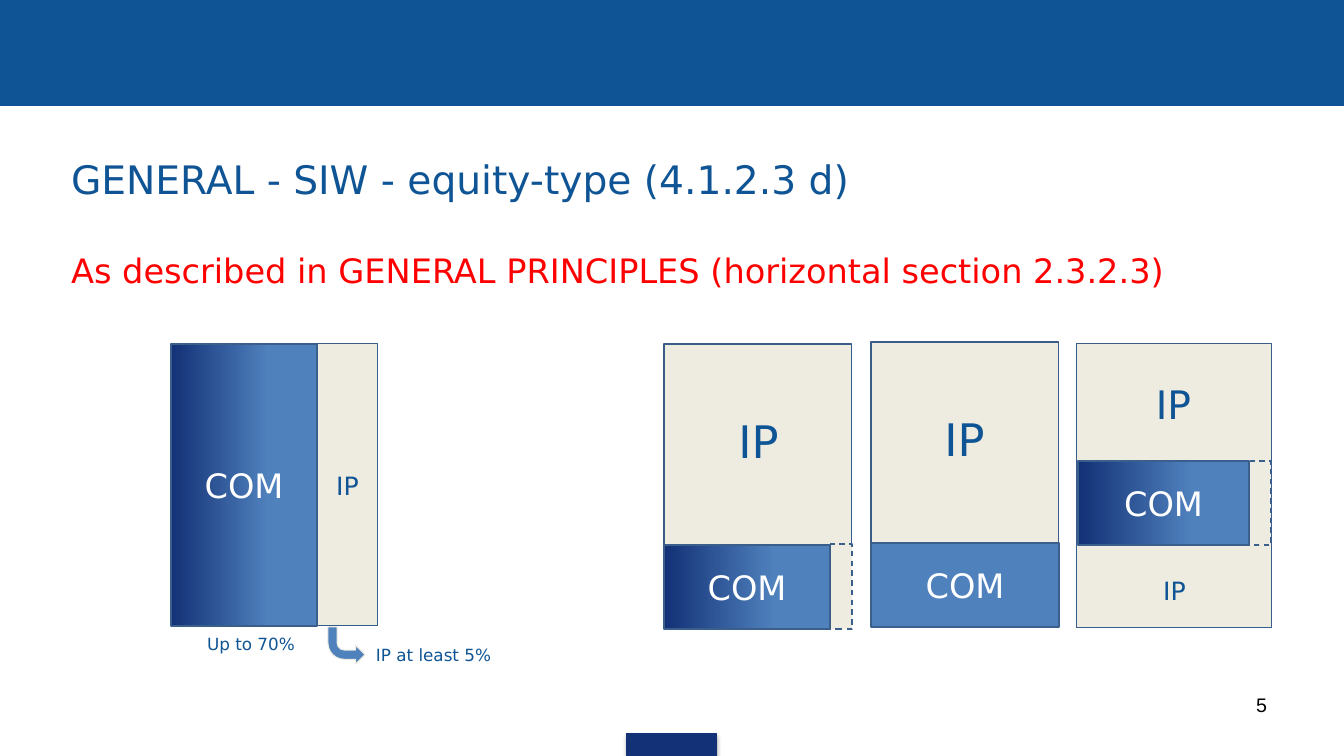
"""Build the slide on equity-type SIW shares between COM and IP."""
from lxml import etree
from pptx import Presentation
from pptx.dml.color import RGBColor
from pptx.enum.dml import MSO_LINE
from pptx.enum.shapes import MSO_SHAPE
from pptx.enum.text import MSO_ANCHOR, MSO_AUTO_SIZE, PP_ALIGN
from pptx.oxml.ns import qn
from pptx.util import Emu, Pt

RECTANGLE, BENT_ARROW = MSO_SHAPE.RECTANGLE, MSO_SHAPE.BENT_ARROW
LEFT, CENTER, RIGHT = PP_ALIGN.LEFT, PP_ALIGN.CENTER, PP_ALIGN.RIGHT
TOP, MIDDLE = MSO_ANCHOR.TOP, MSO_ANCHOR.MIDDLE
DASH, NO_AUTOFIT = MSO_LINE.DASH, MSO_AUTO_SIZE.NONE

WIDTH, HEIGHT = 1344, 756
EMU_PER_PX = 12192000 / WIDTH
COLORS = {
    "header": "0F5494", "navy": "133176", "red": "FF0000", "blue": "4F81BD",
    "cream": "EEECE1", "edge": "385D8A", "com_edge": "3A5F8C",
    "white": "FFFFFF", "black": "000000",
}

TITLE = "GENERAL - SIW - equity-type (4.1.2.3 d)"
SUBTITLE = "As described in GENERAL PRINCIPLES (horizontal section 2.3.2.3)"
TITLE_BOX = (61, 150, 1254, 60)
SUBTITLE_BOX = (61, 245, 1254, 55)

IP_BLOCKS = [(317, 344, 61, 282), (664, 344, 188, 201),
             (871, 342, 188, 201), (1077, 344, 195, 284)]
DASHED_BLOCKS = [(829, 544, 23, 85), (1248, 461, 23, 84)]
COM_BLOCKS = [
    ((171, 344, 146, 282), True),
    ((664, 545, 166, 84), True),
    ((871, 543, 188, 84), False),
    ((1078, 461, 171, 84), True),
]
LABELS = [
    ("IP at least 5%", (366, 640, 198, 30), {"size": 12}),
    ("Up to 70%", (188, 629, 126, 30), {"size": 12, "align": CENTER}),
    ("IP", (317, 465, 61, 40), {"size": 18, "align": CENTER}),
    ("IP", (702, 409, 113, 68), {"size": 32, "align": CENTER}),
    ("IP", (908, 407, 113, 68), {"size": 32, "align": CENTER}),
    ("IP", (1130, 375, 87, 60), {"size": 28, "align": CENTER}),
    ("IP", (1080, 570, 189, 40), {"size": 18, "align": CENTER}),
    ("5", (964, 688, 313, 52),
     {"size": 14, "align": RIGHT, "font": "Arial", "color": "black"}),
]


def px(value):
    return Emu(round(value * EMU_PER_PX))


def rgb(name):
    return RGBColor.from_string(COLORS[name])


def write(shape, text, size=12, color="header", align=LEFT, anchor=TOP,
          font="DejaVu Sans"):
    frame = shape.text_frame
    frame.word_wrap = True
    frame.auto_size = NO_AUTOFIT
    frame.vertical_anchor = anchor
    paragraph = frame.paragraphs[0]
    paragraph.text = text
    paragraph.alignment = align
    paragraph.space_before = Pt(0)
    run_font = paragraph.runs[0].font
    run_font.name, run_font.size = font, Pt(size)
    run_font.color.rgb = rgb(color)


def add_block(slide, box, fill, line, line_width=0.75, kind=RECTANGLE):
    shape = slide.shapes.add_shape(kind, *map(px, box))
    shape.shadow.inherit = False
    shape.fill.solid()
    shape.fill.fore_color.rgb = rgb(fill)
    shape.line.color.rgb = rgb(line)
    shape.line.width = Pt(line_width)
    return shape


def add_com_block(slide, box, shaded):
    shape = add_block(slide, box, "blue", "com_edge", 1)
    if shaded:
        shape.fill.gradient()
        shape.fill.gradient_angle = 0
        stops = zip(shape.fill.gradient_stops, (0, 0.67), ("navy", "blue"))
        for stop, position, color in stops:
            stop.position = position
            stop.color.rgb = rgb(color)
    write(shape, "COM", size=24, color="white", align=CENTER, anchor=MIDDLE)


def add_soft_shadow(shape):
    effects = shape._element.spPr.find(qn("a:effectLst"))
    shadow = etree.SubElement(
        effects, qn("a:outerShdw"), blurRad=str(Pt(3.1)), dist=str(Pt(1.8)),
        dir="5400000", rotWithShape="0")
    color = etree.SubElement(shadow, qn("a:srgbClr"), val=COLORS["black"])
    etree.SubElement(color, qn("a:alpha"), val="35000")


def fill_placeholder(shape, box, text, **text_format):
    shape.left, shape.top, shape.width, shape.height = map(px, box)
    write(shape, text, **text_format)


def main():
    presentation = Presentation()
    presentation.slide_width, presentation.slide_height = px(WIDTH), px(HEIGHT)
    slide = presentation.slides.add_slide(presentation.slide_layouts[1])

    add_block(slide, (0, 0, WIDTH, 106), "header", "header")
    add_soft_shadow(add_block(slide, (627, 734, 90, 22), "navy", "navy"))

    fill_placeholder(slide.shapes.title, TITLE_BOX, TITLE, size=28)
    body = slide.placeholders[1]
    properties = body.text_frame.paragraphs[0]._p.get_or_add_pPr()
    properties.set("marL", "0")
    properties.set("indent", "0")
    etree.SubElement(properties, qn("a:buNone"))
    fill_placeholder(body, SUBTITLE_BOX, SUBTITLE, size=24, color="red")

    for box in IP_BLOCKS:
        add_block(slide, box, "cream", "edge")
    for box in DASHED_BLOCKS:
        dashed = add_block(slide, box, "cream", "com_edge", 1)
        dashed.line.dash_style = DASH
    for box, shaded in COM_BLOCKS:
        add_com_block(slide, box, shaded)

    arrow = add_block(slide, (328, 627, 37, 37), "blue", "cream",
                      kind=BENT_ARROW)
    arrow._element.spPr.find(qn("a:xfrm")).set("flipV", "1")

    for text, box, text_format in LABELS:
        write(slide.shapes.add_textbox(*map(px, box)), text, **text_format)

    presentation.save("out.pptx")


if __name__ == "__main__":
    main()
